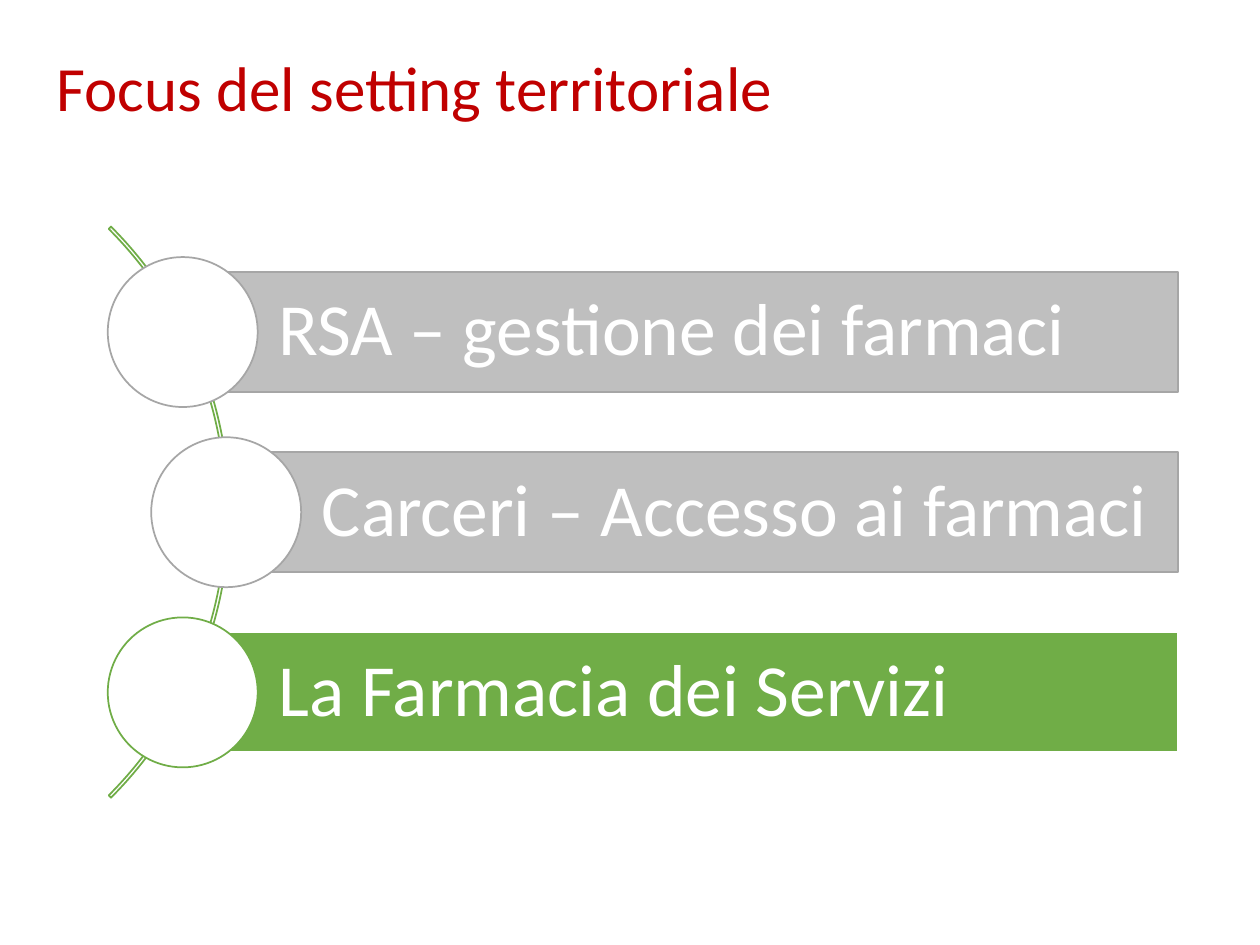
import pptx
import pptx.util
import pptx.dml.color
import pptx.enum.shapes
import pptx.enum.text

SHAPE = pptx.enum.shapes.MSO_SHAPE
COLORS = {"title": "C00000", "white": "FFFFFF", "grey": "BFBFBF",
          "grey_edge": "A6A6A6", "green": "70AD47"}
COLUMNS, ROWS = 100, 75


class SlideBuilder:
    """Holds the style and the slide; lengths are grid columns and rows."""

    font = "Calibri"

    def __init__(self, deck):
        self.slide = deck.slides.add_slide(deck.slide_layouts[6])
        self.column = deck.slide_width / COLUMNS
        self.row = deck.slide_height / ROWS

    def place(self, left, top, width, height):
        return (round(left * self.column), round(top * self.row),
                round(width * self.column), round(height * self.row))

    def color(self, name):
        return pptx.dml.color.RGBColor.from_string(COLORS[name])

    def shape(self, preset, box, edge, fill=None):
        item = self.slide.shapes.add_shape(preset, *self.place(*box))
        item.shadow.inherit = False
        if fill:
            item.fill.solid()
            item.fill.fore_color.rgb = self.color(fill)
        else:
            item.fill.background()
        item.line.color.rgb = self.color(edge)
        item.line.width = pptx.util.Pt(1)
        return item

    def label(self, item, text, size, color, insets):
        frame = item.text_frame
        frame.word_wrap = True
        frame.vertical_anchor = pptx.enum.text.MSO_ANCHOR.MIDDLE
        for side, inset in insets.items():
            setattr(frame, f"margin_{side}", pptx.util.Inches(inset))
        line = frame.paragraphs[0]
        line.text = text
        line.alignment = pptx.enum.text.PP_ALIGN.LEFT
        line.line_spacing = 0.9
        font_format = {"name": self.font, "size": pptx.util.Pt(size)}
        for key, value in font_format.items():
            setattr(line.font, key, value)
        line.font.color.rgb = self.color(color)

    def title(self, text, box):
        item = self.slide.shapes.add_textbox(*self.place(*box))
        self.label(item, text, 36, "title",
                   {"left": 0.1, "right": 0.1, "top": 0.05, "bottom": 0.05})

    def arc(self, center_x, center_y, radius):
        item = self.shape(SHAPE.BLOCK_ARC, (center_x - radius, center_y - radius,
                                            2 * radius, 2 * radius), "green")
        # Start angle, end angle and thickness
        for index, value in enumerate((189, 27, 0.004)):
            item.adjustments[index] = value

    def topic(self, text, center_x, center_y, fill, bar_edge, circle_edge):
        bar_height, bar_right, diameter = 9.5, 93.5, 11.9
        bar = self.shape(SHAPE.RECTANGLE,
                         (center_x, center_y - bar_height / 2,
                          bar_right - center_x, bar_height), bar_edge, fill)
        self.label(bar, text, 42, "white",
                   {"left": 0.76, "right": 0.12, "top": 0.12, "bottom": 0.12})
        self.shape(SHAPE.OVAL, (center_x - diameter / 2, center_y - diameter / 2,
                                diameter, diameter), circle_edge, "white")


def main():
    deck = pptx.Presentation()
    deck.slide_width = pptx.util.Inches(10)
    deck.slide_height = pptx.util.Inches(7.5)
    builder = SlideBuilder(deck)

    # Curve behind the topics
    middle, pitch = 40.65, 14.3
    builder.arc(-13.85, middle, 32.05)

    # Topics along the curve, the last one highlighted
    grey = ("grey", "grey_edge", "grey_edge")
    green = ("green", "white", "green")
    topics = [("RSA – gestione dei farmaci", 14.5, grey),
              ("Carceri – Accesso ai farmaci", 17.95, grey),
              ("La Farmacia dei Servizi", 14.5, green)]
    for index, (text, center_x, style) in enumerate(topics):
        builder.topic(text, center_x, middle + (index - 1) * pitch, *style)

    # Title
    builder.title("Focus del setting territoriale", (3.5, 0, 86.2, 14.5))

    deck.save("out.pptx")


if __name__ == "__main__":
    main()
